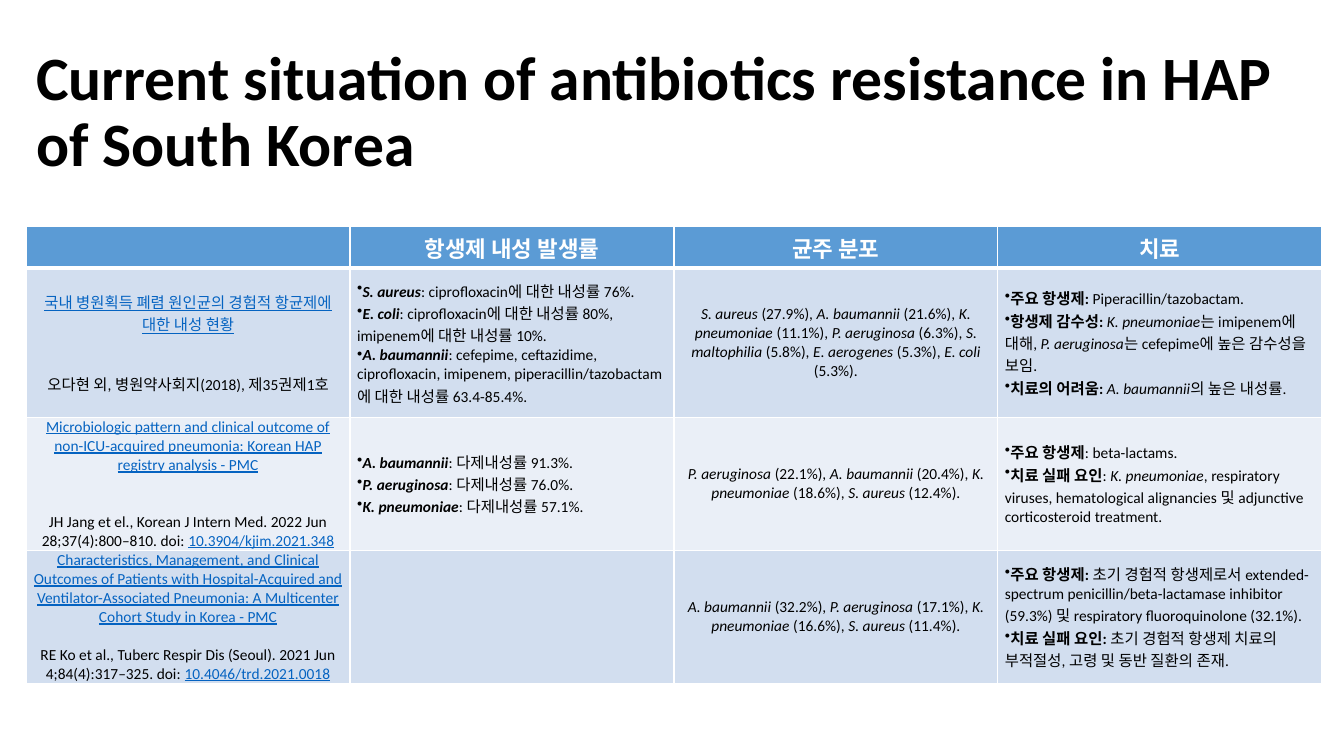
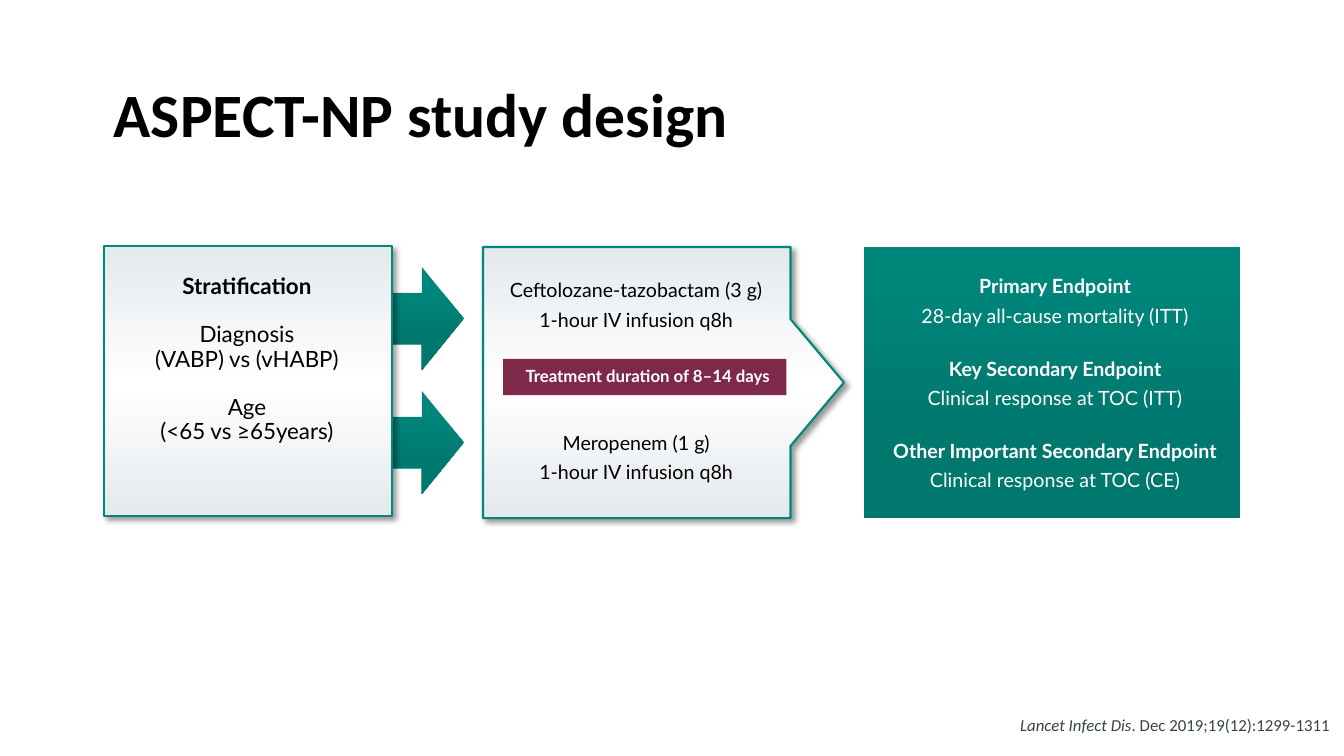
from lxml import etree
from pptx import Presentation
from pptx.dml.color import RGBColor
from pptx.enum.shapes import MSO_SHAPE
from pptx.enum.text import MSO_ANCHOR, PP_ALIGN
from pptx.oxml.ns import qn
from pptx.util import Inches, Pt

RECT, ARROW = MSO_SHAPE.RECTANGLE, MSO_SHAPE.RIGHT_ARROW
TOP, MIDDLE = MSO_ANCHOR.TOP, MSO_ANCHOR.MIDDLE
LEFT, CENTER = PP_ALIGN.LEFT, PP_ALIGN.CENTER

BLACK = RGBColor(0x00, 0x00, 0x00)
WHITE = RGBColor(0xFF, 0xFF, 0xFF)
BLUE = RGBColor(0x5B, 0x9B, 0xD5)
BAND = RGBColor(0xD2, 0xDE, 0xEF)
PALE = RGBColor(0xEA, 0xEF, 0xF7)
LINK = RGBColor(0x05, 0x63, 0xC1)
TEAL = RGBColor(0x00, 0x87, 0x7C)
DEEP = RGBColor(0x00, 0x78, 0x6E)
MIST = RGBColor(0xE4, 0xE9, 0xEC)
WINE = RGBColor(0x7F, 0x29, 0x4A)
SLATE = RGBColor(0x37, 0x42, 0x4A)

BODY, LABEL = "Calibri", "Lato"
SILVER = [(0, MIST), (51, WHITE), (100, MIST)]
GREEN = [(0, TEAL), (73, DEEP), (100, DEEP)]
GREEN_ARROW = [(18, TEAL), (73, DEEP), (100, DEEP)]

HEADS = ["", "항생제 내성 발생률", "균주 분포", "치료"]
HEIGHTS = [0.41, 1.48, 1.32, 1.32]
STUDIES = [
    {
        "source": [
            (0, [("u", "국내 병원획득 폐렴 원인균의 경험적 항균제에 대한 내성 현황")]),
            (27, [("", "오다현 외, 병원약사회지(2018), 제35권제1호")]),
        ],
        "rates": [
            [("bi", "S. aureus"), ("", ": ciprofloxacin에 대한 내성률 76%.")],
            [("bi", "E. coli"), ("", ": ciprofloxacin에 대한 내성률 80%, imipenem에 대한 내성률 10%.")],
            [("bi", "A. baumannii"),
             ("", ": cefepime, ceftazidime, ciprofloxacin, imipenem, "
                  "piperacillin/tazobactam에 대한 내성률 63.4-85.4%.")],
        ],
        "strains": [("S. aureus", 27.9), ("A. baumannii", 21.6), ("K. pneumoniae", 11.1),
                    ("P. aeruginosa", 6.3), ("S. maltophilia", 5.8),
                    ("E. aerogenes", 5.3), ("E. coli", 5.3)],
        "care": [
            [("b", "주요 항생제: "), ("", "Piperacillin/tazobactam.")],
            [("b", "항생제 감수성: "), ("i", "K. pneumoniae"), ("", "는 imipenem에 대해, "),
             ("i", "P. aeruginosa"), ("", "는 cefepime에 높은 감수성을 보임.")],
            [("b", "치료의 어려움: "), ("i", "A. baumannii"), ("", "의 높은 내성률.")],
        ],
    },
    {
        "source": [
            (0, [("u", "Microbiologic pattern and clinical outcome of non-ICU-acquired "
                       "pneumonia: Korean HAP registry analysis - PMC")]),
            (27, [("", "JH Jang et el., Korean J Intern Med. 2022 Jun 28;37(4):800–810. doi: "),
                  ("u", "10.3904/kjim.2021.348")]),
        ],
        "rates": [
            [("bi", "A. baumannii"), ("", ": 다제내성률 91.3%.")],
            [("bi", "P. aeruginosa"), ("", ": 다제내성률 76.0%.")],
            [("bi", "K. pneumoniae"), ("", ": 다제내성률 57.1%.")],
        ],
        "strains": [("P. aeruginosa", 22.1), ("A. baumannii", 20.4),
                    ("K. pneumoniae", 18.6), ("S. aureus", 12.4)],
        "care": [
            [("b", "주요 항생제"), ("", ": beta-lactams.")],
            [("b", "치료 실패 요인"), ("", ": "), ("i", "K. pneumoniae"),
             ("", ", respiratory viruses, hematological alignancies 및 adjunctive "
                  "corticosteroid treatment.")],
        ],
    },
    {
        "source": [
            (0, [("u", "Characteristics, Management, and Clinical Outcomes of Patients with "
                       "Hospital-Acquired and Ventilator-Associated Pneumonia: A Multicenter "
                       "Cohort Study in Korea - PMC")]),
            (13.4, [("", "RE Ko et al., Tuberc Respir Dis (Seoul). 2021 Jun 4;84(4):317–325. doi: "),
                    ("u", "10.4046/trd.2021.0018")]),
        ],
        "rates": [],
        "strains": [("A. baumannii", 32.2), ("P. aeruginosa", 17.1),
                    ("K. pneumoniae", 16.6), ("S. aureus", 11.4)],
        "care": [
            [("b", "주요 항생제: "),
             ("", "초기 경험적 항생제로서 extended-spectrum penicillin/beta-lactamase inhibitor "
                  "(59.3%) 및 respiratory fluoroquinolone (32.1%).")],
            [("b", "치료 실패 요인: "),
             ("", "초기 경험적 항생제 치료의 부적절성, 고령 및 동반 질환의 존재.")],
        ],
    },
]

STRATA = [(0, [("b", "Stratification")]),
          (17.3, [("", "Diagnosis")]), (0, [("", "(VABP) vs (vHABP)")]),
          (17.3, [("", "Age")]), (0, [("", "(<65 vs ≥65years)")])]
ARMS = [(0, [("", "Ceftolozane-tazobactam (3 g)")]), (0, [("", "1-hour IV infusion q8h")]),
        (67, [("", "Meropenem (1 g)")]), (0, [("", "1-hour IV infusion q8h")])]
GOALS = [(0, [("b", "Primary Endpoint")]), (0, [("", "28-day all-cause mortality (ITT)")]),
         (16.8, [("b", "Key Secondary Endpoint")]), (0, [("", "Clinical response at TOC (ITT)")]),
         (16.8, [("b", "Other Important Secondary Endpoint")]),
         (0, [("", "Clinical response at TOC (CE)")])]


def write(frame, lines, size, color=BLACK, font=BODY, align=CENTER, pitch=None,
          indent=0, bullet=False):
    """Fill a frame with lines, each a gap before it and its styled runs."""
    for i, (gap, runs) in enumerate(lines):
        par = frame.paragraphs[0] if i == 0 else frame.add_paragraph()
        par.alignment = align
        if gap:
            par.space_before = Pt(gap)
        if pitch:
            par.line_spacing = pitch
        props = par._p.get_or_add_pPr()
        props.set("marL", str(Inches(indent)))
        props.set("indent", "0")
        if bullet:
            etree.SubElement(props, qn("a:buChar")).set("char", "•")
        for style, text in runs:
            run = par.add_run()
            run.text = text
            face = run.font
            face.name, face.size = font, Pt(size)
            face.bold, face.italic = "b" in style, "i" in style
            face.underline = "u" in style
            face.color.rgb = LINK if "u" in style else color


def inset(frame, left, top, right, bottom):
    """Set the four inner margins of a frame or cell."""
    frame.margin_left, frame.margin_top = Inches(left), Inches(top)
    frame.margin_right, frame.margin_bottom = Inches(right), Inches(bottom)


def text_box(slide, box, anchor=TOP, wrap=True):
    """Add an empty text box and return its frame."""
    frame = slide.shapes.add_textbox(*map(Inches, box)).text_frame
    frame.word_wrap = wrap
    frame.vertical_anchor = anchor
    return frame


def title(slide, box, text):
    """Add the slide title."""
    write(text_box(slide, box, MIDDLE), [(0, [("b", text)])], 44, align=LEFT, pitch=0.9)


def shade(shape, stops):
    """Fill a shape with a gradient that runs from top to bottom."""
    shape.fill.gradient()
    shape.fill.gradient_angle = 270
    ramp = shape._element.spPr.find(".//" + qn("a:gsLst"))
    for old in list(ramp):
        ramp.remove(old)
    for place, color in stops:
        stop = etree.SubElement(ramp, qn("a:gs"), pos=str(place * 1000))
        etree.SubElement(stop, qn("a:srgbClr"), val=str(color))


def raise_up(shape):
    """Give a panel its silver fill, teal outline and soft shadow."""
    shade(shape, SILVER)
    shape.line.color.rgb = TEAL
    shape.line.width = Pt(1.5)
    shape.shadow.inherit = False
    effects = shape._element.spPr.find(qn("a:effectLst"))
    drop = etree.SubElement(effects, qn("a:outerShdw"), blurRad=str(Pt(4)),
                            dist=str(Pt(3)), dir="2700000", algn="tl", rotWithShape="0")
    tint = etree.SubElement(drop, qn("a:srgbClr"), val=str(BLACK))
    etree.SubElement(tint, qn("a:alpha"), val="40000")


def plain(slide, kind, box):
    """Add a preset shape with no outline or shadow."""
    shape = slide.shapes.add_shape(kind, *map(Inches, box))
    shape.shadow.inherit = False
    shape.line.fill.background()
    return shape


def style_cell(cell, fill, base):
    """Set the fill, white borders, margins and anchor of a cell."""
    props = cell._tc.get_or_add_tcPr()
    for side, width in (("L", 1), ("R", 1), ("T", 1), ("B", base)):
        edge = etree.SubElement(props, qn("a:ln" + side), w=str(Pt(width)))
        paint = etree.SubElement(edge, qn("a:solidFill"))
        etree.SubElement(paint, qn("a:srgbClr"), val=str(WHITE))
    cell.fill.solid()
    cell.fill.fore_color.rgb = fill
    cell.vertical_anchor = MIDDLE
    inset(cell, 0.07, 0, 0.07, 0)


def spread(strains):
    """Turn strains and their shares into one line of runs."""
    runs = []
    for i, (name, share) in enumerate(strains):
        end = "." if i == len(strains) - 1 else ", "
        runs += [("i", name), ("", f" ({share}%){end}")]
    return [(0, runs)]


def study_table(slide, left, top, width):
    """Add the table of studies."""
    grid = slide.shapes.add_table(len(HEIGHTS), len(HEADS), Inches(left), Inches(top),
                                  Inches(width), Inches(sum(HEIGHTS))).table
    for row, height in zip(grid.rows, HEIGHTS):
        row.height = Inches(height)
    for col, head in enumerate(HEADS):
        cell = grid.cell(0, col)
        style_cell(cell, BLUE, 3)
        if head:
            write(cell.text_frame, [(0, [("b", head)])], 16, WHITE)
    for i, study in enumerate(STUDIES, 1):
        parts = [(study["source"], False), ([(0, r) for r in study["rates"]], True),
                 (spread(study["strains"]), False), ([(0, r) for r in study["care"]], True)]
        for col, (lines, listed) in enumerate(parts):
            cell = grid.cell(i, col)
            style_cell(cell, BAND if i % 2 else PALE, 1)
            write(cell.text_frame, lines, 11, align=LEFT if listed else CENTER, bullet=listed)


def strata_panel(slide, left, top, width, height):
    """Add the stratification panel with its two arrows behind it."""
    for drop in (0.21, 1.44):
        shade(plain(slide, ARROW, (left + width - 0.12, top + drop, 0.83, 1.02)), GREEN_ARROW)
    raise_up(slide.shapes.add_shape(RECT, *map(Inches, (left, top, width, height))))
    frame = text_box(slide, (left + 0.34, top + 0.29, 2.1, 1.7))
    inset(frame, 0, 0, 0, 0)
    write(frame, STRATA, 16, font=LABEL, pitch=0.9, indent=0.06)


def arms_panel(slide, left, top, width, height):
    """Add the pointed treatment panel and its duration bar."""
    side, mid, half = left + width - 0.53, top + height / 2, 0.63
    points = [(side, top), (side, mid - half), (left + width, mid), (side, mid + half),
              (side, top + height), (left, top + height)]
    pen = slide.shapes.build_freeform(Inches(left), Inches(top))
    pen.add_line_segments([(Inches(x), Inches(y)) for x, y in points])
    raise_up(pen.convert_to_shape())
    frame = text_box(slide, (left - 0.3, top + 0.25, width, 2.2))
    inset(frame, 0.1, 0, 0.1, 0)
    write(frame, ARMS, 14, font=LABEL, pitch=Pt(21), indent=0.06)
    bar = plain(slide, RECT, (left + 0.2, top + 1.11, 2.81, 0.36))
    bar.fill.solid()
    bar.fill.fore_color.rgb = WINE
    bar.text_frame.vertical_anchor = MIDDLE
    write(bar.text_frame, [(0, [("b", "Treatment duration of 8–14 days")])], 12, WHITE,
          LABEL, pitch=0.9, indent=0.06)


def goals_panel(slide, box):
    """Add the panel of endpoints."""
    panel = plain(slide, RECT, box)
    shade(panel, GREEN)
    frame = panel.text_frame
    frame.word_wrap = True
    frame.vertical_anchor = MIDDLE
    inset(frame, 0.1, 0.05, 0.1, 0.1)
    write(frame, GOALS, 14, WHITE, LABEL, pitch=Pt(21), indent=0.06)


def table_slide(slide):
    """Build the slide on resistance in South Korea."""
    title(slide, (0.26, 0.4, 12.6, 1.45),
          "Current situation of antibiotics resistance in HAP of South Korea")
    study_table(slide, 0.26, 2.25, 12.85)


def design_slide(slide):
    """Build the slide on the study design."""
    title(slide, (1.03, 0.44, 11.5, 1.45), "ASPECT-NP study design")
    strata_panel(slide, 1.03, 2.44, 2.86, 2.68)
    arms_panel(slide, 4.79, 2.45, 3.58, 2.69)
    goals_panel(slide, (8.57, 2.45, 3.73, 2.69))
    write(text_box(slide, (10.02, 7.04, 3.31, 0.3), wrap=False),
          [(0, [("i", "Lancet Infect Dis"), ("", ". Dec 2019;19(12):1299-1311")])],
          12, SLATE, align=LEFT)


def main():
    """Build and save the deck."""
    deck = Presentation()
    deck.slide_width, deck.slide_height = Inches(13.33), Inches(7.5)
    for build in (table_slide, design_slide):
        build(deck.slides.add_slide(deck.slide_layouts[6]))
    deck.save("out.pptx")


if __name__ == "__main__":
    main()
